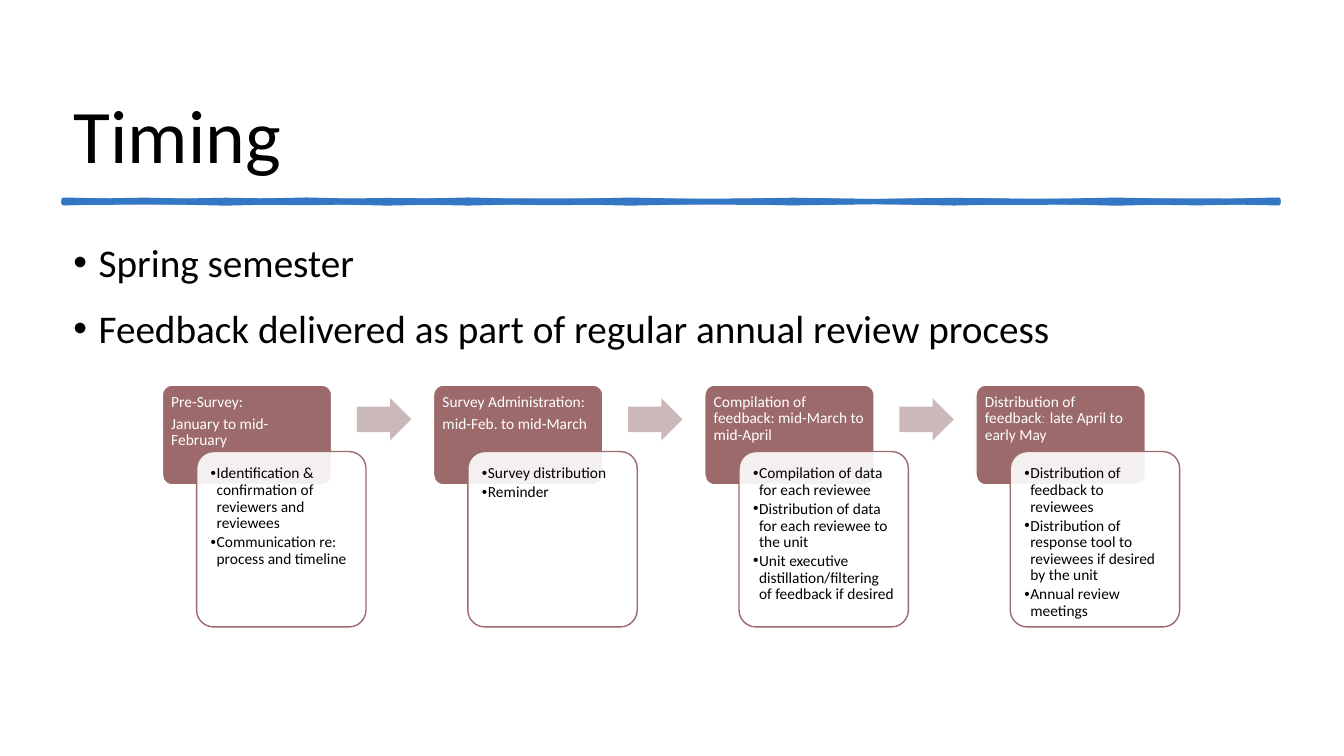
from math import sin

from pptx import Presentation, util as u
from pptx.dml.color import RGBColor
from pptx.enum import shapes as s, text as t
from pptx.oxml.ns import qn
from lxml import etree

# Slide, and the grid of the four steps (inches)
WIDE, HIGH = 13.33, 7.5
LEFT, TOP, PITCH = 1.61, 3.82, 2.69
EDGE, SPAN = 0.63, 12.05
CARD = 1.68

ROSE, PALE, BLUE = "9C6A6A", "CBB9B9", "3376C3"
WHITE, BLACK = "FFFFFF", "000000"

# Heading lines, then points; a bar parts off text in the second font
STEPS = [
    (["Pre-Survey: ", "January to mid-February"],
     ["Identification & confirmation of reviewers and reviewees",
      "Communication re: process and timeline"]),
    (["Survey Administration:", "mid-Feb. to mid-March"],
     ["Survey distribution", "Reminder"]),
    (["Compilation of feedback: mid-March to mid-April"],
     ["Compilation of data for each reviewee",
      "Distribution of data for each reviewee to the unit",
      "Unit executive distillation/filtering of feedback if desired"]),
    (["Distribution of feedback|: |late April to early May"],
     ["Distribution of feedback to reviewees",
      "Distribution of response tool to reviewees if desired by the unit",
      "Annual review meetings"]),
]


def color(code):
    return RGBColor.from_string(code)


def box(*nums):
    return [u.Inches(n) for n in nums]


def paint(shape, fill, line=None, width=1, alpha=None):
    shape.shadow.inherit = False
    shape.fill.solid()
    shape.fill.fore_color.rgb = color(fill)
    if alpha:
        tint = shape.fill._xPr.find(qn("a:solidFill"))[0]
        etree.SubElement(tint, qn("a:alpha")).set("val", str(alpha * 1000))
    if line:
        shape.line.color.rgb = color(line)
        shape.line.width = u.Pt(width)
    else:
        shape.line.fill.background()


def write(frame, lines, size, ink, space, before=0, after=0, hang=0):
    """Fill a frame with paragraphs; a hang above zero makes bullets."""
    frame.word_wrap = True
    frame.auto_size = t.MSO_AUTO_SIZE.NONE
    for i, line in enumerate(lines):
        para = frame.add_paragraph() if i else frame.paragraphs[0]
        para.alignment = t.PP_ALIGN.LEFT
        para.line_spacing = space
        para.space_before, para.space_after = u.Pt(before), u.Pt(after)
        for j, part in enumerate(line.split("|")):
            run = para.add_run()
            run.text = part
            run.font.name = "Comic Neue" if j % 2 else "Calibri"
            run.font.size = u.Pt(size)
            run.font.color.rgb = color(ink)
        if hang:
            props = para._p.get_or_add_pPr()
            props.set("marL", str(u.Inches(hang)))
            props.set("indent", str(-u.Inches(hang)))
            etree.SubElement(props, qn("a:buFont")).set("typeface", "Arial")
            etree.SubElement(props, qn("a:buChar")).set("char", "•")


def pad(frame, side):
    frame.vertical_anchor = t.MSO_ANCHOR.TOP
    frame.margin_left = frame.margin_right = u.Inches(side)
    frame.margin_top = frame.margin_bottom = u.Inches(side)


def add_back(slide):
    back = slide.shapes.add_shape(s.MSO_SHAPE.RECTANGLE, *box(0, 0, WIDE, HIGH))
    paint(back, WHITE)
    slide.shapes._spTree.insert(2, back._element)


def add_title(slide, words):
    title = slide.shapes.title
    title.left, title.top, title.width, title.height = box(EDGE, 0.26, SPAN, 1.57)
    title.text_frame.vertical_anchor = t.MSO_ANCHOR.BOTTOM
    write(title.text_frame, [words], 54, BLACK, 0.9)


def strand(phase, steps=15):
    """Outline of one pen stroke: a wavy top edge and a wavy way back."""
    xs = [EDGE + SPAN * i / steps for i in range(steps + 1)]
    top = [box(x, 1.99 + 0.01 * sin(3.7 * x + phase)) for x in xs]
    low = [box(x, 2.01 + 0.01 * sin(4.3 * x - phase)) for x in xs]
    return top + low[::-1]


def add_rule(slide):
    first, second = strand(0), strand(2)
    path = slide.shapes.build_freeform(*first[0])
    path.add_line_segments(first[1:], close=True)
    path.move_to(*second[0])
    path.add_line_segments(second[1:], close=True)
    paint(path.convert_to_shape(), BLUE, BLUE, 3)


def add_card(slide, place, lines, ink, side, after, hang=0, **look):
    card = slide.shapes.add_shape(s.MSO_SHAPE.ROUNDED_RECTANGLE, *box(*place))
    card.adjustments[0] = 0.1
    paint(card, **look)
    pad(card.text_frame, side)
    write(card.text_frame, lines, 11, ink, 0.9, after=after, hang=hang)


def add_arrow(slide, x):
    arrow = slide.shapes.add_shape(
        s.MSO_SHAPE.RIGHT_ARROW, *box(x, TOP + 0.13, 0.54, 0.42))
    arrow.adjustments[0], arrow.adjustments[1] = 0.6, 0.5
    paint(arrow, PALE)


def main():
    deck = Presentation()
    deck.slide_width, deck.slide_height = box(WIDE, HIGH)
    slide = deck.slides.add_slide(deck.slide_layouts[5])

    # Backdrop, title and rule
    add_back(slide)
    add_title(slide, "Timing")
    add_rule(slide)

    # Main points
    body = slide.shapes.add_textbox(*box(EDGE, 2.27, 10.55, 4.5))
    write(body.text_frame,
          ["Spring semester",
           "Feedback delivered as part of regular annual review process"],
          28, BLACK, 1.1, before=10, hang=0.25)

    # Steps, with an arrow between neighbours
    for i, (head, points) in enumerate(STEPS):
        x = LEFT + PITCH * i
        add_card(slide, (x, TOP, CARD, 0.99), head, WHITE, 0.06, 3.85,
                 fill=ROSE, line=WHITE)
        add_card(slide, (x + 0.34, TOP + 0.66, CARD, 1.74), points, BLACK,
                 0.09, 1.65, 0.06, fill=WHITE, line=ROSE, alpha=90)
        if i < len(STEPS) - 1:
            add_arrow(slide, x + 1.93)

    deck.save("out.pptx")


if __name__ == "__main__":
    main()
